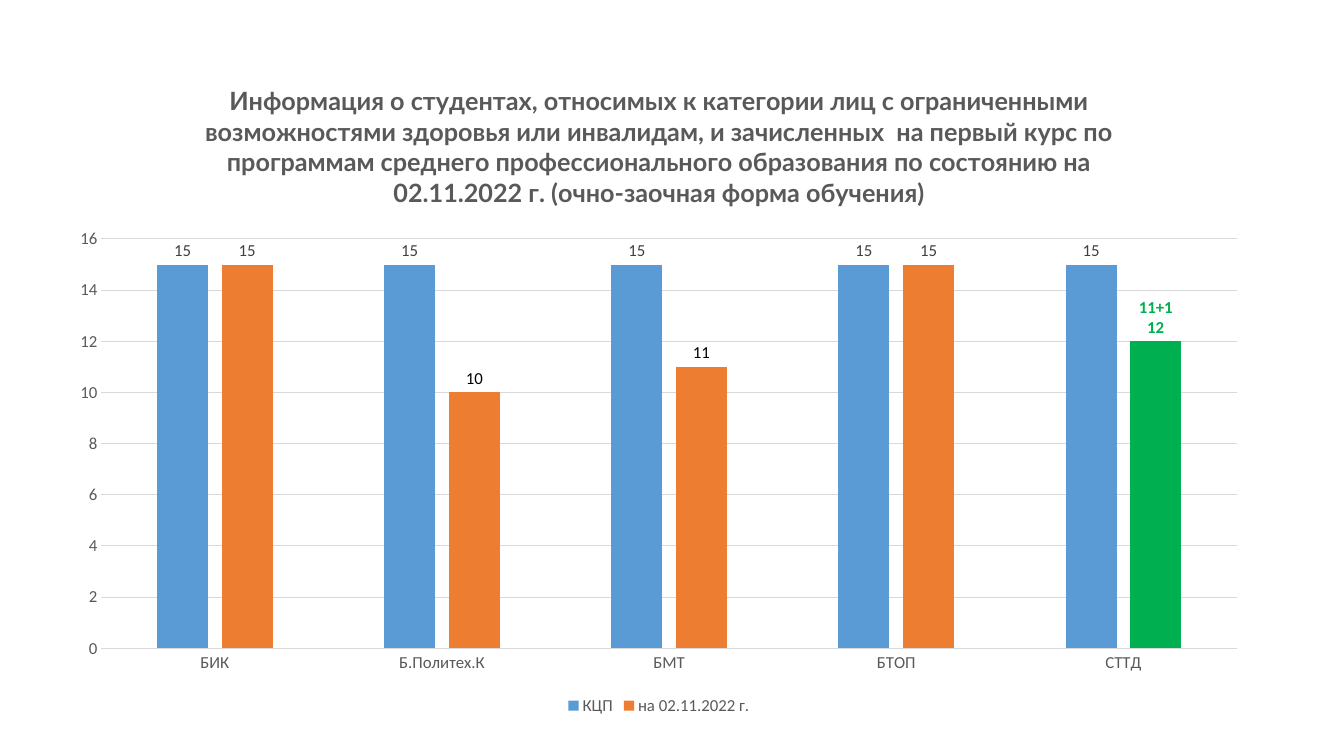
from pptx import Presentation
from pptx.chart.data import CategoryChartData as ChartData
from pptx.dml.color import RGBColor
from pptx.enum.chart import XL_CHART_TYPE as ChartType
from pptx.enum.chart import XL_LABEL_POSITION as LabelPlace
from pptx.enum.chart import XL_LEGEND_POSITION as LegendPlace
from pptx.enum.chart import XL_TICK_MARK as TickMark
from pptx.oxml import parse_xml
from pptx.oxml.ns import nsdecls, qn
from pptx.util import Inches, Pt

COLORS = {
    "plan": "5B9BD5",
    "actual": "ED7D31",
    "accent": "00B050",
    "grid": "D9D9D9",
    "text": "595959",
    "label": "404040",
    "black": "000000",
}
TITLE = (
    "Информация о студентах, относимых к категории лиц с ограниченными "
    "возможностями здоровья или инвалидам, и зачисленных  на первый курс по "
    "программам среднего профессионального образования по состоянию на "
    "02.11.2022 г. (очно-заочная форма обучения)"
)
COLLEGES = ["БИК", "Б.Политех.К", "БМТ", "БТОП", "СТТД"]
SERIES = {
    "КЦП": ("plan", [15, 15, 15, 15, 15]),
    "на 02.11.2022 г.": ("actual", [15, 10, 11, 15, 12]),
}


def color(name):
    return RGBColor.from_string(COLORS[name])


class ChartPage:
    """Style and current slide, with lengths as shares of the slide's size."""

    def __init__(self, deck):
        self.deck = deck
        self.page = deck.slides.add_slide(deck.slide_layouts[6])

    def style(self, font, ink="text", **values):
        for name, value in {"name": "Calibri", "size": Pt(12), "bold": False, **values}.items():
            setattr(font, name, value)
        font.color.rgb = color(ink)

    def columns(self, left, top, width, height):
        data = ChartData()
        data.categories = COLLEGES
        for name, (_, values) in SERIES.items():
            data.add_series(name, values)
        wide, high = self.deck.slide_width, self.deck.slide_height
        box = (int(wide * left), int(high * top), int(wide * width), int(high * height))
        frame = self.page.shapes.add_chart(ChartType.COLUMN_CLUSTERED, *box, data)
        chart = frame.chart
        self.style(chart.font, "black", size=Pt(10))
        plot = chart.plots[0]
        for name, value in {"gap_width": 219, "overlap": -27, "vary_by_categories": False}.items():
            setattr(plot, name, value)
        return chart

    def title(self, chart, text):
        para = chart.chart_title.text_frame.paragraphs[0]
        span = para.add_run()
        span.text = text
        self.style(span.font, name="Lato", size=Pt(18), bold=True)

    def plot_area(self, chart, **shares):
        area = chart.element.find(".//" + qn("c:plotArea"))
        for old in area.findall(qn("c:layout")):
            area.remove(old)
        sizes = "".join(f'<c:{side} val="{share}"/>' for side, share in shares.items())
        area.insert(0, parse_xml(
            f'<c:layout {nsdecls("c")}><c:manualLayout><c:layoutTarget val="inner"/>'
            f'<c:xMode val="edge"/><c:yMode val="edge"/>{sizes}</c:manualLayout></c:layout>'))

    def line(self, line, ink):
        line.color.rgb = color(ink)
        line.width = Pt(0.75)

    def axes(self, chart, top, step):
        for axis in (chart.category_axis, chart.value_axis):
            axis.major_tick_mark = axis.minor_tick_mark = TickMark.NONE
            self.style(axis.tick_labels.font)
        self.line(chart.category_axis.format.line, "grid")
        scale = chart.value_axis
        for name, value in {"minimum_scale": 0, "maximum_scale": top, "major_unit": step}.items():
            setattr(scale, name, value)
        scale.format.line.fill.background()
        self.line(scale.major_gridlines.format.line, "grid")

    def legend(self, chart):
        chart.has_legend = True
        chart.legend.position = LegendPlace.BOTTOM
        chart.legend.include_in_layout = False
        self.style(chart.legend.font)

    def fill(self, target, ink):
        target.format.fill.solid()
        target.format.fill.fore_color.rgb = color(ink)

    def series(self, chart):
        for series, (ink, _) in zip(chart.plots[0].series, SERIES.values()):
            self.fill(series, ink)
            series.invert_if_negative = False
            labels = series.data_labels
            labels.show_value = True
            labels.position = LabelPlace.OUTSIDE_END
            self.style(labels.font, "label")

    def point_label(self, point, ink, lines=(), bold=False):
        label = point.data_label
        if lines:
            box = label.text_frame
            box.text = "\n".join(lines)
            for para in box.paragraphs:
                for span in para.runs:
                    self.style(span.font, ink, bold=bold)
        else:
            self.style(label.font, ink, bold=bold)
        label.position = LabelPlace.OUTSIDE_END


def main():
    deck = Presentation()
    deck.slide_width, deck.slide_height = Inches(13.33), Inches(7.5)
    page = ChartPage(deck)

    # Chart with its heading, axes and legend
    chart = page.columns(left=0.0413, top=0.0787, width=0.898, height=0.8733)
    page.title(chart, TITLE)
    page.plot_area(chart, x=0.038, y=0.272, w=0.941, h=0.62)
    page.axes(chart, top=16, step=2)
    page.legend(chart)
    page.series(chart)

    # Points that stand out among the enrolled students
    enrolled = chart.plots[0].series[1].points
    for college in ("Б.Политех.К", "БМТ"):
        page.point_label(enrolled[COLLEGES.index(college)], "black")
    last = enrolled[COLLEGES.index("СТТД")]
    page.fill(last, "accent")
    page.point_label(last, "accent", ("11+1", "12"), bold=True)

    deck.save("out.pptx")


if __name__ == "__main__":
    main()
